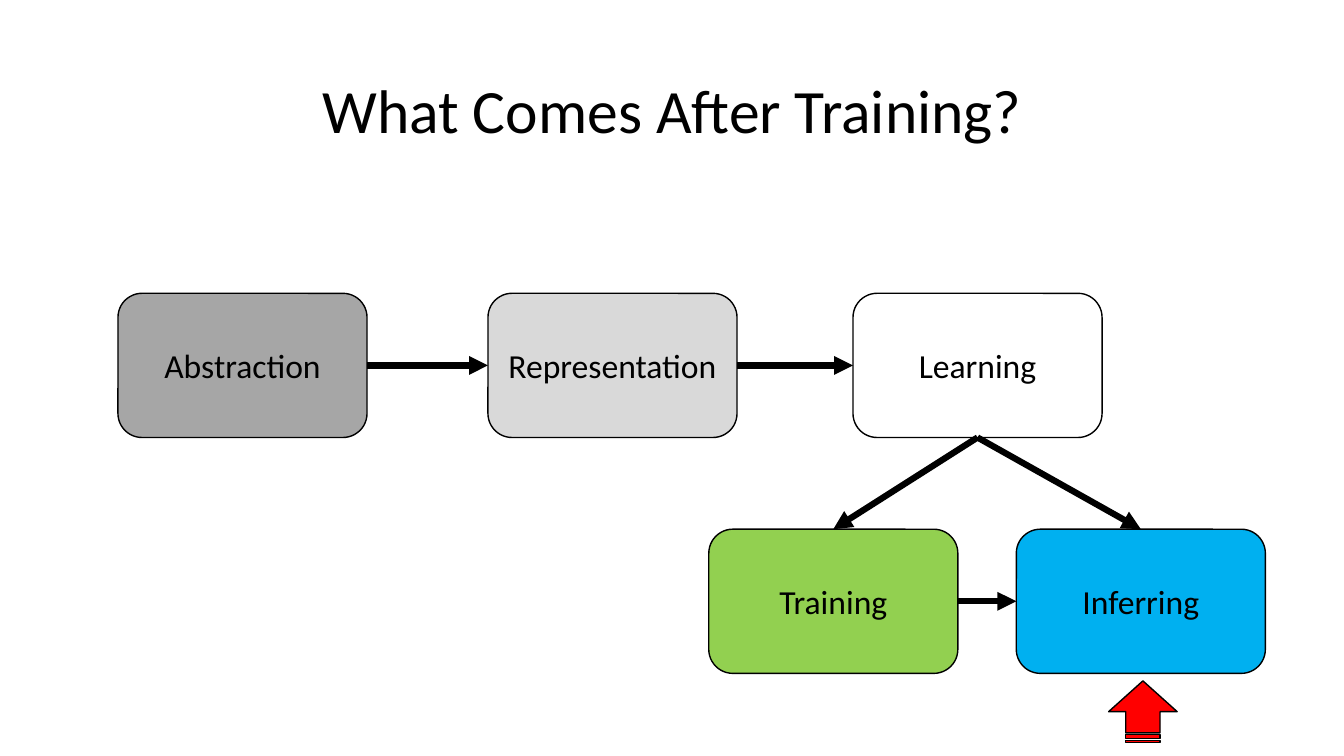
"""Build the slide that shows which step follows training."""
from dataclasses import dataclass
from enum import IntEnum

from lxml.etree import SubElement
from pptx import Presentation
from pptx.dml.color import RGBColor
from pptx.enum.shapes import MSO_CONNECTOR, MSO_SHAPE
from pptx.enum.text import MSO_ANCHOR, PP_ALIGN
from pptx.oxml.ns import qn
from pptx.shapes.autoshape import Shape
from pptx.slide import Slide
from pptx.util import Inches, Pt

WIDTH, HEIGHT = Inches(13.33), Inches(7.5)
FONT = "Calibri"
COLORS = {
    "ink": "000000",
    "abstraction": "A6A6A6",
    "representation": "D9D9D9",
    "learning": "FFFFFF",
    "training": "92D050",
    "inferring": "00B0F0",
    "marker": "FF0000",
}


class Side(IntEnum):
    TOP = 0
    LEFT = 1
    BOTTOM = 2
    RIGHT = 3


@dataclass(frozen=True)
class Area:
    left: float
    top: float
    width: float
    height: float

    def lengths(self) -> tuple[int, int, int, int]:
        return (
            int(WIDTH * self.left / 100),
            int(HEIGHT * self.top / 100),
            int(WIDTH * self.width / 100),
            int(HEIGHT * self.height / 100),
        )


@dataclass(frozen=True)
class Step:
    name: str
    left: float
    top: float


@dataclass(frozen=True)
class Link:
    source: str
    source_side: Side
    target: str
    target_side: Side


TITLE_AREA = Area(6.9, 5.33, 86.27, 19.33)
MARKER_AREA = Area(82.75, 89.6, 4.58, 9.07)
STEP_WIDTH, STEP_HEIGHT = 18.53, 19.07
UPPER_ROW, LOWER_ROW = 38.8, 70

STEPS = [
    Step("Representation", 36.31, UPPER_ROW),
    Step("Abstraction", 8.78, UPPER_ROW),
    Step("Learning", 63.47, UPPER_ROW),
    Step("Training", 52.74, LOWER_ROW),
    Step("Inferring", 75.62, LOWER_ROW),
]
LINKS = [
    Link("Abstraction", Side.RIGHT, "Representation", Side.LEFT),
    Link("Representation", Side.RIGHT, "Learning", Side.LEFT),
    Link("Learning", Side.BOTTOM, "Training", Side.TOP),
    Link("Learning", Side.BOTTOM, "Inferring", Side.TOP),
    Link("Training", Side.RIGHT, "Inferring", Side.LEFT),
]


def color(name: str) -> RGBColor:
    return RGBColor.from_string(COLORS[name])


def write_text(box: Shape, text: str, size: float, spacing: float = 1.0) -> None:
    frame = box.text_frame
    frame.word_wrap = True
    frame.vertical_anchor = MSO_ANCHOR.MIDDLE
    para = frame.paragraphs[0]
    para.alignment = PP_ALIGN.CENTER
    para.line_spacing = spacing
    span = para.add_run()
    span.text = text
    span.font.name = FONT
    span.font.size = Pt(size)
    span.font.color.rgb = color("ink")


def add_outlined(page: Slide, preset: MSO_SHAPE, area: Area, fill: str) -> Shape:
    box = page.shapes.add_shape(preset, *area.lengths())
    box.shadow.inherit = False
    box.fill.solid()
    box.fill.fore_color.rgb = color(fill)
    box.line.color.rgb = color("ink")
    box.line.width = Pt(1)
    return box


def add_step(page: Slide, step: Step) -> Shape:
    area = Area(step.left, step.top, STEP_WIDTH, STEP_HEIGHT)
    box = add_outlined(page, MSO_SHAPE.ROUNDED_RECTANGLE, area, step.name.lower())
    write_text(box, step.name, 24)
    return box


def add_link(page: Slide, link: Link, boxes: dict[str, Shape]) -> None:
    arrow = page.shapes.add_connector(MSO_CONNECTOR.STRAIGHT, 0, 0, 0, 0)
    arrow.begin_connect(boxes[link.source], link.source_side.value)
    arrow.end_connect(boxes[link.target], link.target_side.value)
    arrow.line.color.rgb = color("ink")
    arrow.line.width = Pt(4.5)
    SubElement(arrow.line._get_or_add_ln(), qn("a:tailEnd"), type="triangle")
    SubElement(arrow._element.spPr, qn("a:effectLst"))


def main() -> None:
    deck = Presentation()
    deck.slide_width, deck.slide_height = WIDTH, HEIGHT
    page = deck.slides.add_slide(deck.slide_layouts[6])
    title = page.shapes.add_textbox(*TITLE_AREA.lengths())
    write_text(title, "What Comes After Training?", 44, 0.9)
    boxes = {step.name: add_step(page, step) for step in STEPS}
    for link in LINKS:
        add_link(page, link, boxes)
    marker = add_outlined(page, MSO_SHAPE.STRIPED_RIGHT_ARROW, MARKER_AREA, "marker")
    marker.rotation = 270
    deck.save("out.pptx")


if __name__ == "__main__":
    main()
